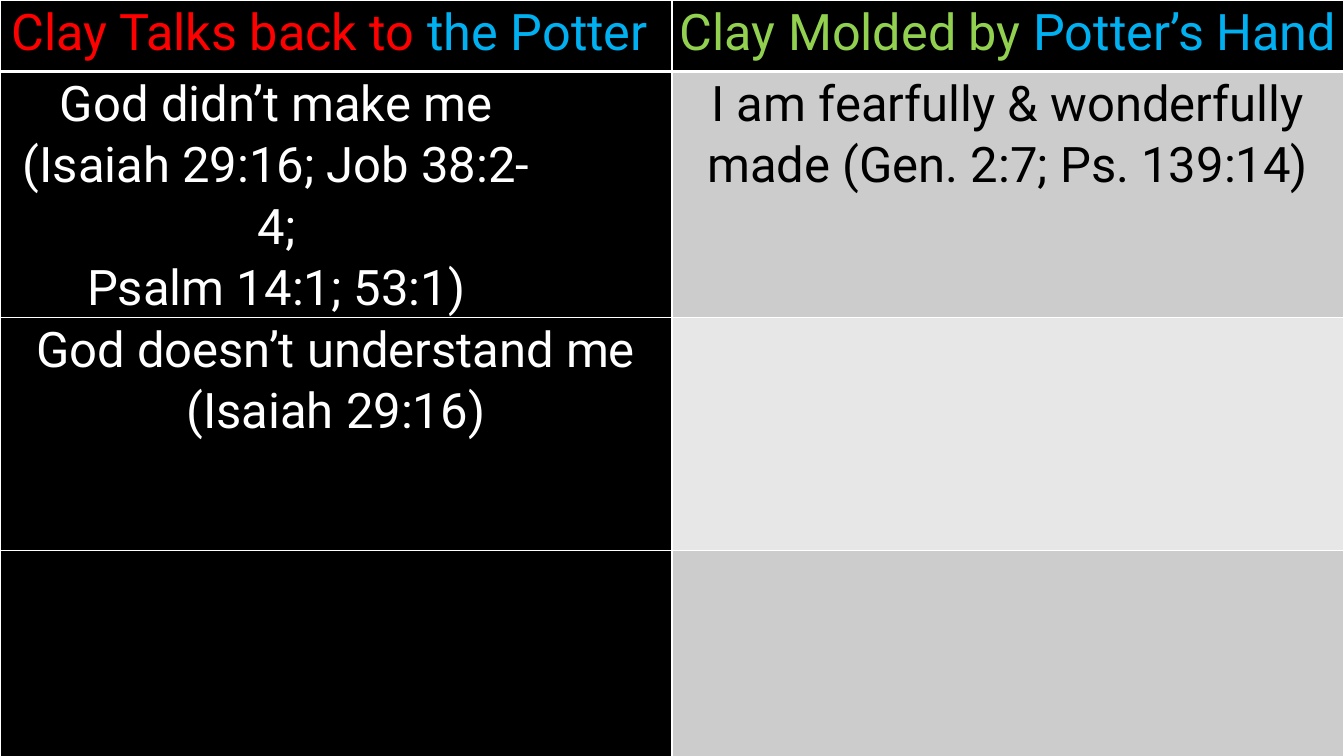
import pptx
import pptx.util
import pptx.dml.color
import pptx.enum.text
import pptx.oxml
import pptx.oxml.ns

Cm = pptx.util.Cm
Pt = pptx.util.Pt
RGB = pptx.dml.color.RGBColor

BLACK = RGB(0x00, 0x00, 0x00)
WHITE = RGB(0xFF, 0xFF, 0xFF)
RED = RGB(0xFF, 0x00, 0x00)
BLUE = RGB(0x00, 0xB0, 0xF0)
GREEN = RGB(0x92, 0xD0, 0x50)
GRAY = RGB(0xCC, 0xCC, 0xCC)
LIGHT_GRAY = RGB(0xE7, 0xE7, 0xE7)

WIDTH, HEIGHT = Cm(33.87), Cm(19.05)
ROW_SHARES = [0.71, 2.17, 2.31, 2.31]
HEADER_SIZE, BODY_SIZE = Pt(36), Pt(35)

ROWS = [
    [
        (BLACK, [[("Clay Talks back to ", RED), ("the Potter ", BLUE)]]),
        (BLACK, [[("Clay Molded by ", GREEN), ("Potter’s Hand", BLUE)]]),
    ],
    [
        (BLACK, [
            [("God didn’t make me", WHITE)],
            [("(Isaiah 29:16; Job 38:2-4;", WHITE)],
            [("Psalm 14:1; 53:1)", WHITE)],
        ]),
        (GRAY, [[("I am fearfully & wonderfully made (Gen. 2:7; Ps. 139:14)", BLACK)]]),
    ],
    [
        (BLACK, [[("God doesn’t understand me (Isaiah 29:16)", WHITE)]]),
        (LIGHT_GRAY, []),
    ],
    [(BLACK, []), (GRAY, [])],
]


def set_borders(cell, top, bottom):
    tcPr = cell._tc.get_or_add_tcPr()
    sides = [("lnL", 1), ("lnR", 1), ("lnT", top), ("lnB", bottom)]
    for i, (side, width) in enumerate(sides):
        ln = pptx.oxml.parse_xml(
            f'<a:{side} {pptx.oxml.ns.nsdecls("a")} w="{Pt(width)}">'
            f'<a:solidFill><a:srgbClr val="{WHITE}"/></a:solidFill></a:{side}>'
        )
        tcPr.insert(i, ln)


def fill_text(cell, paragraphs, size):
    tf = cell.text_frame
    for i, runs in enumerate(paragraphs):
        p = tf.add_paragraph() if i else tf.paragraphs[0]
        p.alignment = pptx.enum.text.PP_ALIGN.CENTER
        p.line_spacing = 1.07
        for text, color in runs:
            r = p.add_run()
            r.text = text
            r.font.name = "Roboto"
            r.font.size = size
            r.font.bold = False
            r.font.color.rgb = color


def add_comparison(s, left, top, width, height):
    table = s.shapes.add_table(len(ROWS), 2, left, top, width, height).table
    for column in table.columns:
        column.width = width // 2
    for row, share in zip(table.rows, ROW_SHARES):
        row.height = int(height * share / sum(ROW_SHARES))
    for i, row in enumerate(ROWS):
        for j, (fill, paragraphs) in enumerate(row):
            cell = table.cell(i, j)
            cell.margin_left = cell.margin_right = Cm(0.18)
            cell.margin_top = cell.margin_bottom = 0
            cell.fill.solid()
            cell.fill.fore_color.rgb = fill
            set_borders(cell, 3 if i == 1 else 1, 3 if i == 0 else 1)
            fill_text(cell, paragraphs, BODY_SIZE if i else HEADER_SIZE)
    first_line = table.cell(1, 0).text_frame.paragraphs[0]
    first_line._p.get_or_add_pPr().set("marR", str(Cm(3)))


def main():
    prs = pptx.Presentation()
    prs.slide_width, prs.slide_height = WIDTH, HEIGHT
    s = prs.slides.add_slide(prs.slide_layouts[6])
    s.background.fill.solid()
    s.background.fill.fore_color.rgb = BLACK
    add_comparison(s, 0, 0, WIDTH, HEIGHT)
    prs.save("out.pptx")


if __name__ == "__main__":
    main()
